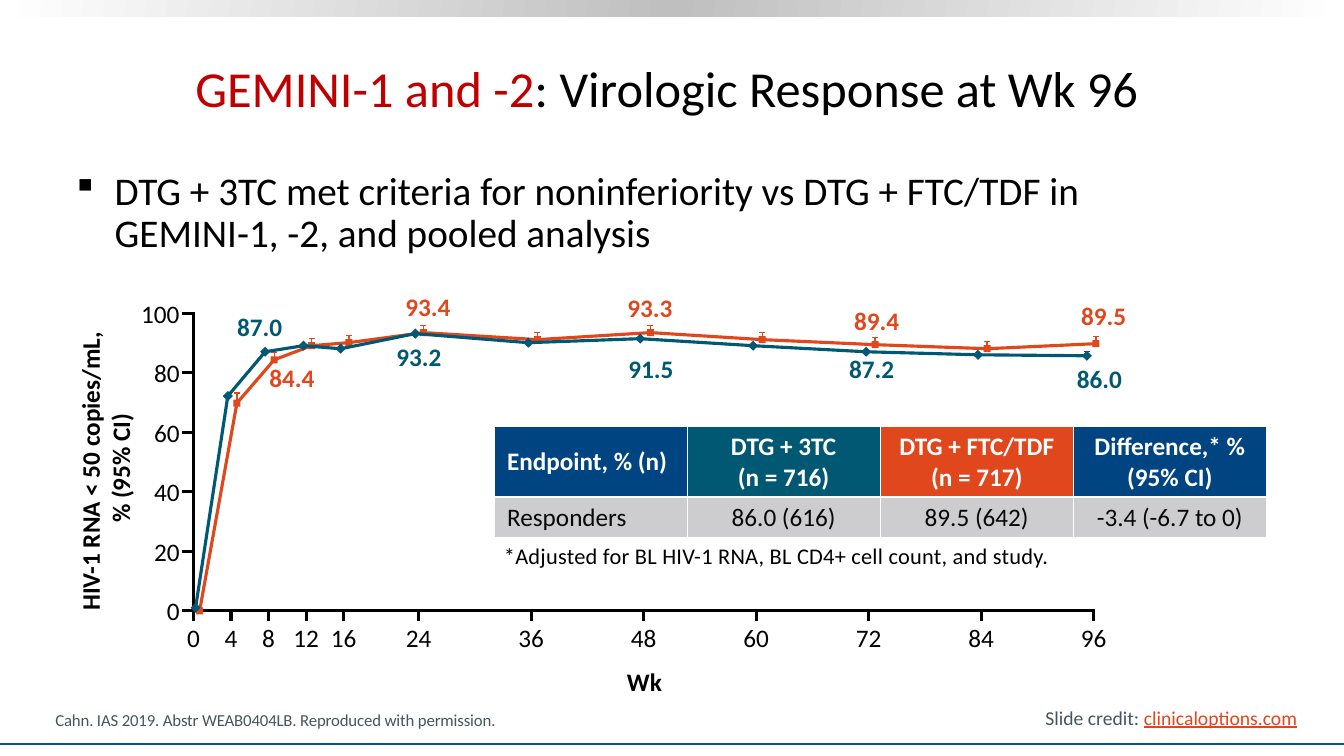
from copy import deepcopy

from lxml import etree
from pptx import Presentation
from pptx import util as u
from pptx.dml.color import RGBColor
from pptx.enum import shapes, text

BLACK = RGBColor(0x00, 0x00, 0x00)
WHITE = RGBColor(0xFF, 0xFF, 0xFF)
RED = RGBColor(0xC0, 0x00, 0x00)
ORANGE = RGBColor(0xE1, 0x47, 0x1D)
TEAL = RGBColor(0x01, 0x58, 0x73)
NAVY = RGBColor(0x00, 0x44, 0x82)
BLUE = RGBColor(0x00, 0x53, 0x9B)
SLATE = RGBColor(0x45, 0x55, 0x60)
SILVER = RGBColor(0xBF, 0xBF, 0xBF)
LIGHT_GRAY = RGBColor(0xCD, 0xCD, 0xCF)
INK = RGBColor(0x07, 0x08, 0x0A)
LEFT, CENTER, RIGHT = text.PP_ALIGN.LEFT, text.PP_ALIGN.CENTER, text.PP_ALIGN.RIGHT
TOP, MIDDLE, BOTTOM = text.MSO_ANCHOR.TOP, text.MSO_ANCHOR.MIDDLE, text.MSO_ANCHOR.BOTTOM
DRAWING = "http://schemas.openxmlformats.org/drawingml/2006/main"

presentation = Presentation()
presentation.slide_width, presentation.slide_height = u.Inches(13.33), u.Inches(7.5)
slide = presentation.slides.add_slide(presentation.slide_layouts[6])


def add_text(content, box=None, frame=None, size=18, color=BLACK, bold=False,
             align=LEFT, anchor=TOP, wrap=True, spacing=0):
    """Fill a frame, or a new text box, with text or with (text, color) parts."""
    if frame is None:
        frame = slide.shapes.add_textbox(*map(u.Inches, box)).text_frame
        frame.word_wrap = wrap
        frame.vertical_anchor = anchor
    if isinstance(content, str):
        frame.text = content
    else:
        for part, part_color in content:
            run = frame.paragraphs[0].add_run()
            run.text, run.font.color.rgb = part, part_color
    for paragraph in frame.paragraphs:
        paragraph.alignment = align
        for run in paragraph.runs:
            run.font.name, run.font.size, run.font.bold = "Calibri", u.Pt(size), bold
            if isinstance(content, str):
                run.font.color.rgb = color
            if spacing:
                run.font._element.set("spc", str(spacing))
    return frame


def add_line(x1, y1, x2, y2, color=BLACK, width=2.25):
    line = slide.shapes.add_connector(
        shapes.MSO_CONNECTOR.STRAIGHT, *map(u.Inches, (x1, y1, x2, y2)))
    line.line.color.rgb, line.line.width = color, u.Pt(width)
    etree.SubElement(line._element.spPr, f"{{{DRAWING}}}effectLst")


# Top band and bottom rule
band = slide.shapes.add_shape(
    shapes.MSO_SHAPE.RECTANGLE, 0, 0, u.Inches(13.33), u.Inches(0.16))
band.shadow.inherit = False
band.line.fill.background()
band.fill.gradient()
band.fill.gradient_angle = 170
stop_list = band._element.spPr.find(f".//{{{DRAWING}}}gsLst")
stop_list.append(deepcopy(stop_list[0]))
for stop, position, color in zip(band.fill.gradient_stops, (0, 0.5, 1), (WHITE, SILVER, WHITE)):
    stop.position, stop.color.rgb = position, color
add_line(0, 7.38, 13.33, 7.38, BLUE, 1.5)

# Title, bullet and footers
add_text([("GEMINI-1 and -2", RED), (": Virologic Response at Wk 96", BLACK)],
         (0.67, 0.26, 11.89, 1.21), size=36, align=CENTER, anchor=MIDDLE)
body = add_text("DTG + 3TC met criteria for noninferiority vs DTG + FTC/TDF in\v"
                "GEMINI-1, -2, and pooled analysis", (0.66, 1.65, 11.9, 0.98), size=28)
body.paragraphs[0].line_spacing = 0.9
bullet = body.paragraphs[0]._p.get_or_add_pPr()
bullet.set("marL", str(u.Inches(0.38)))
bullet.set("indent", str(u.Inches(-0.38)))
etree.SubElement(bullet, f"{{{DRAWING}}}buFont", typeface="Wingdings")
etree.SubElement(bullet, f"{{{DRAWING}}}buChar", char="§")
add_text("Cahn. IAS 2019. Abstr WEAB0404LB. Reproduced with permission.",
         (0.45, 6.99, 8.59, 0.3), size=12, color=SLATE, anchor=BOTTOM, spacing=-10)
credit = add_text([("Slide credit: ", SLATE), ("clinicaloptions.com", ORANGE)],
                  (10.27, 6.95, 2.72, 0.34), size=14, wrap=False)
credit.paragraphs[0].runs[1].font.underline = True

# Endpoint table
add_text("*Adjusted for BL HIV-1 RNA, BL CD4+ cell count, and study.",
         (4.9, 5.33, 6.67, 0.37), size=16, spacing=20)
rows = [["Endpoint, % (n)", "DTG + 3TC\n(n = 716)", "DTG + FTC/TDF\n(n = 717)",
         "Difference,* % (95% CI)"],
        ["Responders", "86.0 (616)", "89.5 (642)", "-3.4 (-6.7 to 0)"]]
fills = [[NAVY, TEAL, ORANGE, NAVY], [LIGHT_GRAY] * 4]
table = slide.shapes.add_table(
    2, 4, *map(u.Inches, (4.9, 4.23, 7.66, 1.1))).table
for row, height in zip(table.rows, (0.7, 0.4)):
    row.height = u.Inches(height)
for r, row in enumerate(rows):
    for c, content in enumerate(row):
        cell = table.cell(r, c)
        cell.fill.solid()
        cell.fill.fore_color.rgb = fills[r][c]
        cell.vertical_anchor = MIDDLE
        cell.margin_left = cell.margin_right = u.Inches(0.13)
        add_text(content, frame=cell.text_frame, color=INK if r else WHITE,
                 bold=r == 0, align=CENTER if c else LEFT)

# Axis ticks, numbers and titles
AXIS_X, AXIS_Y = 1.92, 6.06
for value in range(0, 101, 20):
    y = AXIS_Y - value * 0.0295
    add_line(AXIS_X - 0.11, y, AXIS_X, y)
    add_text(str(value), (1.28, y - 0.2, 0.6, 0.4), align=RIGHT, wrap=False)
for week in (0, 4, 8, 12, 16, 24, 36, 48, 60, 72, 84, 96):
    x = AXIS_X + week * 0.093
    add_line(x, AXIS_Y, x, AXIS_Y + 0.1)
    add_text(str(week), (x - 0.23, 6.12, 0.46, 0.4), align=CENTER, wrap=False)
add_text("Wk", (6.12, 6.56, 0.55, 0.4), bold=True, wrap=False)
y_title = slide.shapes.add_textbox(*map(u.Inches, (-0.49, 4.29, 3.07, 0.71)))
y_title.rotation = 270
y_title.text_frame.word_wrap = False
add_text("HIV-1 RNA < 50 copies/mL, \v% (95% CI)", frame=y_title.text_frame,
         bold=True, align=CENTER)

# Value labels
value_labels = {
    TEAL: [("87.0", 2.25, 3.04), ("93.2", 3.83, 3.34), ("91.5", 6.13, 3.46),
           ("87.2", 8.32, 3.46), ("86.0", 10.58, 3.56)],
    ORANGE: [("84.4", 2.57, 3.55), ("93.4", 3.92, 2.84), ("93.3", 6.12, 2.85),
             ("89.4", 8.37, 2.98), ("89.5", 10.62, 2.93)],
}
for color, labels in value_labels.items():
    for label, x, y in labels:
        add_text(label, (x, y, 0.65, 0.4), color=color, bold=True, align=CENTER, wrap=False)

# Axis outline and response curves with their markers
axis = [(AXIS_X, 3.1), (AXIS_X, AXIS_Y), (10.86, AXIS_Y)]
ftc_tdf = [(1.98, 6.06), (2.35, 4), (2.72, 3.57), (3.09, 3.43), (3.46, 3.4), (4.2, 3.3),
           (5.33, 3.37), (6.45, 3.3), (7.56, 3.37), (8.68, 3.42), (9.79, 3.46), (10.87, 3.41)]
dtg_3tc = [(1.94, 6.03), (2.26, 3.93), (2.63, 3.49), (3.01, 3.43), (3.38, 3.46), (4.12, 3.31),
           (5.24, 3.4), (6.35, 3.36), (7.47, 3.43), (8.59, 3.49), (9.7, 3.52), (10.78, 3.53)]
curves = [(axis, BLACK, None, 0, []),
          (ftc_tdf, ORANGE, shapes.MSO_SHAPE.RECTANGLE, 0.07, ftc_tdf[1:]),
          (dtg_3tc, TEAL, shapes.MSO_SHAPE.DIAMOND, 0.1, dtg_3tc[-1:])]
for points, color, marker_kind, size, error_points in curves:
    corners = [(u.Inches(x), u.Inches(y)) for x, y in points]
    builder = slide.shapes.build_freeform(*corners[0])
    builder.add_line_segments(corners[1:], close=False)
    curve = builder.convert_to_shape()
    curve.shadow.inherit = False
    curve.fill.background()
    curve.line.color.rgb, curve.line.width = color, u.Pt(2.25)
    for x, y in points if marker_kind else []:
        marker = slide.shapes.add_shape(
            marker_kind, *map(u.Inches, (x - size / 2, y - size / 2, size, size)))
        marker.shadow.inherit = False
        marker.fill.solid()
        marker.fill.fore_color.rgb = color
        marker.line.fill.background()
    for x, y in error_points:
        reach = 0.1 if y == 4 else 0.04 if color == TEAL else 0.07
        add_line(x - 0.03, y - reach, x + 0.03, y - reach, color, 1)
        add_line(x, y, x, y - reach, color, 1)

presentation.save("out.pptx")
